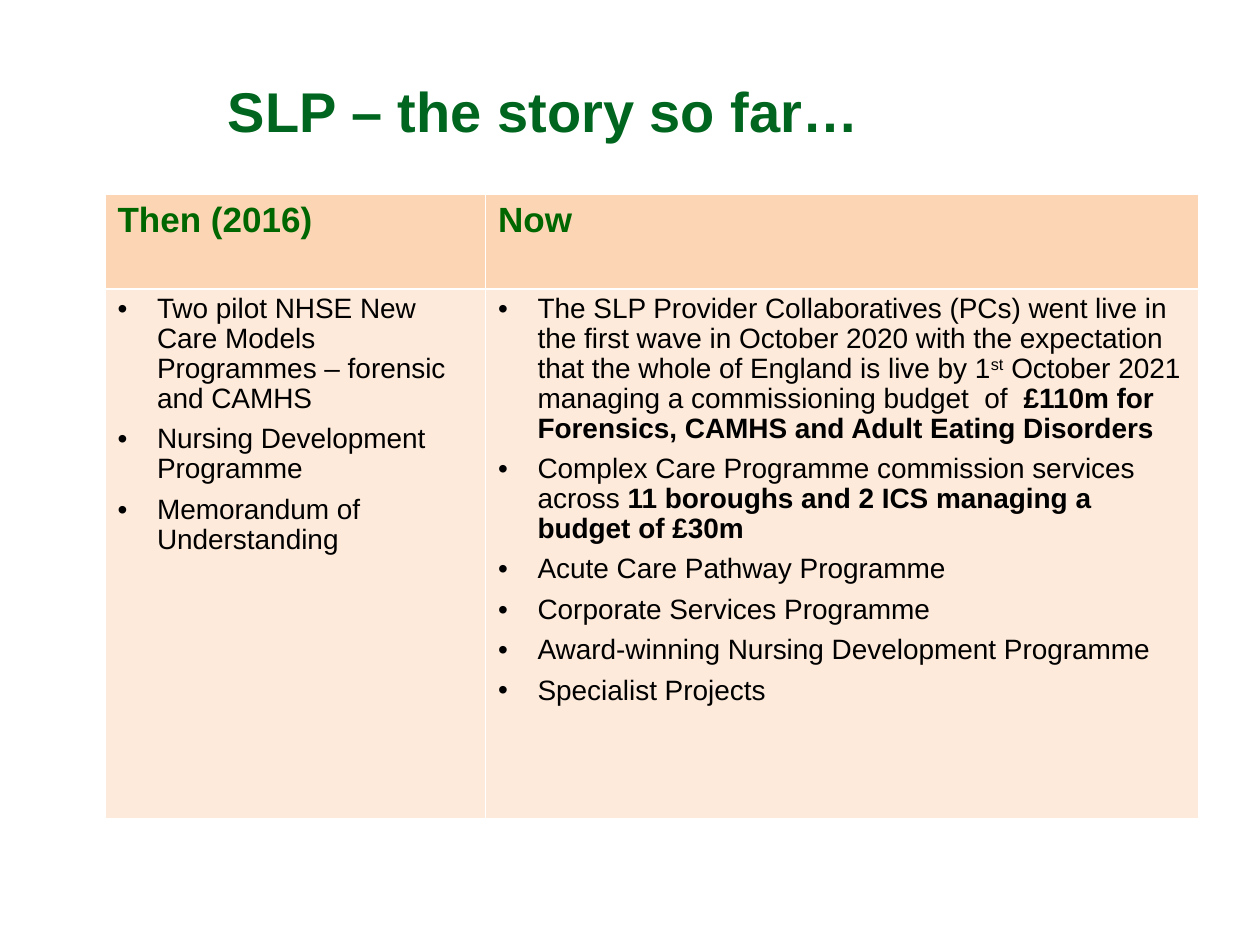
"""Builds the "SLP – the story so far…" slide with its then-and-now table."""
from lxml import etree
from pptx import Presentation
from pptx.dml.color import RGBColor
from pptx.enum.text import MSO_ANCHOR, MSO_AUTO_SIZE, PP_ALIGN
from pptx.oxml.ns import qn
from pptx.util import Pt

LEFT, TOP = PP_ALIGN.LEFT, MSO_ANCHOR.TOP
FIT_SHAPE = MSO_AUTO_SIZE.SHAPE_TO_FIT_TEXT

TITLE = "SLP – the story so far…"
HEADERS = ["Then (2016)", "Now"]
BULLETS = [
    [
        [("Two pilot NHSE New Care Models Programmes – forensic and CAMHS", "")],
        [("Nursing Development Programme", "")],
        [("Memorandum of Understanding", "")],
    ],
    [
        [
            ("The SLP Provider Collaboratives (PCs) went live in the first wave in "
             "October 2020 with the expectation that the whole of England is live by 1", ""),
            ("st", "super"),
            (" October 2021 managing a commissioning budget  of  ", ""),
            ("£110m for Forensics, CAMHS and Adult Eating Disorders", "bold"),
        ],
        [
            ("Complex Care Programme commission services across ", ""),
            ("11 boroughs and 2 ICS managing a budget of £30m", "bold"),
        ],
        [("Acute Care Pathway Programme", "")],
        [("Corporate Services Programme", "")],
        [("Award-winning Nursing Development Programme", "")],
        [("Specialist Projects", "")],
    ],
]

THEME = {
    "font": "Arial",
    "title": (32, "00661F"),
    "header": (20, "006600"),
    "body": (16, "000000"),
    "header_fill": "FCD5B5",
    "body_fill": "FDEADA",
    "border": "FFFFFF",
}
TITLE_BOX = (123, 40.3, 519, 46)
TABLE_AT = (60, 111)
COLS = (217.5, 407.5)
ROWS = (54, 303)
INDENT = 22.5


def set_font(font, role, bold=None):
    """Apply a theme text role to a font."""
    size, color = THEME[role]
    font.name, font.size = THEME["font"], Pt(size)
    font.color.rgb = RGBColor.from_string(color)
    if bold is not None:
        font.bold = bold


def style_cell(cell, fill):
    """Give a cell thin borders and a solid fill."""
    tc_pr = cell._tc.get_or_add_tcPr()
    for side in ("lnL", "lnR", "lnT", "lnB"):
        ln = etree.SubElement(tc_pr, qn(f"a:{side}"), w=str(Pt(1)))
        solid = etree.SubElement(ln, qn("a:solidFill"))
        etree.SubElement(solid, qn("a:srgbClr"), val=THEME["border"])
    cell.fill.solid()
    cell.fill.fore_color.rgb = RGBColor.from_string(THEME[fill])


def add_bullet(p, runs, first):
    """Fill a paragraph with a bulleted line of styled runs."""
    p_pr = p._p.get_or_add_pPr()
    p_pr.set("marL", str(Pt(INDENT)))
    p_pr.set("indent", str(-Pt(INDENT)))
    etree.SubElement(p_pr, qn("a:buFont"), typeface=THEME["font"])
    etree.SubElement(p_pr, qn("a:buChar"), char="•")
    p.line_spacing = 0.96
    p.space_before = Pt(0 if first else 6)
    set_font(p.font, "body")
    for text, style in runs:
        r = p.add_run()
        r.text = text
        r.font.bold = style == "bold"
        if style == "super":
            r.font._element.set("baseline", "30000")


def add_title(s):
    """Place and format the title placeholder."""
    sp = s.shapes.title
    sp.left, sp.top, sp.width, sp.height = map(Pt, TITLE_BOX)
    tf = sp.text_frame
    tf.text = TITLE
    tf.word_wrap, tf.auto_size, tf.vertical_anchor = True, FIT_SHAPE, TOP
    p = tf.paragraphs[0]
    p.alignment = LEFT
    set_font(p.font, "title", True)


def add_story_table(s):
    """Add the then-and-now table."""
    box = map(Pt, (*TABLE_AT, sum(COLS), sum(ROWS)))
    table = s.shapes.add_table(len(ROWS), len(COLS), *box).table
    for row, height in zip(table.rows, ROWS):
        row.height = Pt(height)
    for i, (width, header, bullets) in enumerate(zip(COLS, HEADERS, BULLETS)):
        table.columns[i].width = Pt(width)
        head, body = table.cell(0, i), table.cell(1, i)
        style_cell(head, "header_fill")
        style_cell(body, "body_fill")
        head.text = header
        set_font(head.text_frame.paragraphs[0].font, "header", True)
        tf = body.text_frame
        for j, runs in enumerate(bullets):
            p = tf.add_paragraph() if j else tf.paragraphs[0]
            add_bullet(p, runs, j == 0)


def main():
    """Build and save the slide."""
    prs = Presentation()
    prs.slide_width, prs.slide_height = Pt(720), Pt(540)
    s = prs.slides.add_slide(prs.slide_layouts[5])
    add_title(s)
    add_story_table(s)
    prs.save("out.pptx")


if __name__ == "__main__":
    main()
